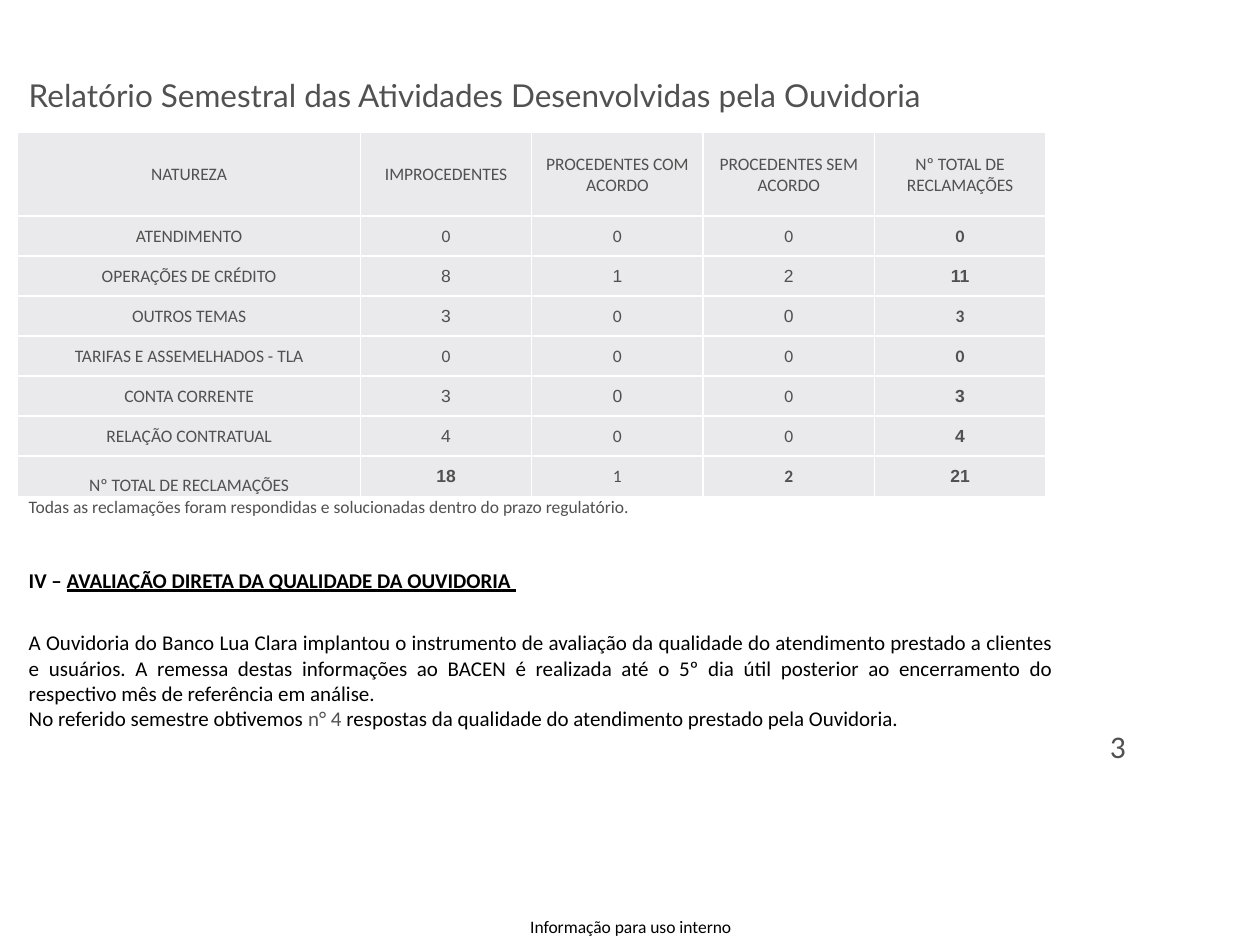
import pptx
import pptx.dml.color
import pptx.enum.text
import pptx.oxml
import pptx.util

HUES = {"ink": "505150", "dark": "000000", "cell": "EAE9EB", "rule": "FFFFFF"}
ALIGN = pptx.enum.text.PP_ALIGN
ANCHOR = pptx.enum.text.MSO_ANCHOR
NS = "http://schemas.openxmlformats.org/drawingml/2006/main"
COLS, ROWS = 100, 75
WIDE, HIGH = pptx.util.Inches(10), pptx.util.Inches(7.5)
HEAD = ["NATUREZA", "IMPROCEDENTES", "PROCEDENTES COM ACORDO",
        "PROCEDENTES SEM ACORDO", "Nº TOTAL DE RECLAMAÇÕES"]
DATA = [
    ("ATENDIMENTO", "0 0 0 0", "CCCC"),
    ("OPERAÇÕES DE CRÉDITO", "8 1 2 11", "AAAA"),
    ("OUTROS TEMAS", "3 0 0 3", "ACAC"),
    ("TARIFAS E ASSEMELHADOS - TLA", "0 0 0 0", "CCCC"),
    ("CONTA CORRENTE", "3 0 0 3", "AACA"),
    ("RELAÇÃO CONTRATUAL", "4 0 0 4", "ACCA"),
    ("Nº TOTAL DE RECLAMAÇÕES", "18 1 2 21", "ACCA"),
]
FACES = {"A": "Arial", "C": "Calibri"}


def tone(key):
    """Return the named colour."""
    return pptx.dml.color.RGBColor.from_string(HUES[key])


def place(box):
    """Turn columns and rows of the slide grid into lengths."""
    left, top, wide, high = box
    return (int(left * WIDE / COLS), int(top * HIGH / ROWS),
            int(wide * WIDE / COLS), int(high * HIGH / ROWS))


def write(para, text, size=10, face="Calibri", hue="ink", bold=False,
          line=False, align=None, gap=0):
    """Add one formatted run to a paragraph."""
    if align is not None:
        para.alignment = align
    if gap:
        para.space_before = pptx.util.Pt(gap)
    run = para.add_run()
    run.text = text
    font = run.font
    font.size, font.name = pptx.util.Pt(size), face
    font.bold, font.underline = bold, line
    font.color.rgb = tone(hue)


def frame(slide, box, anchor=ANCHOR.TOP):
    """Add a wrapping text box and return its frame."""
    text = slide.shapes.add_textbox(*place(box)).text_frame
    text.word_wrap = True
    text.vertical_anchor = anchor
    return text


def title(slide, box):
    """Place the report title."""
    text = frame(slide, box, ANCHOR.BOTTOM)
    text.margin_bottom = pptx.util.Inches(0.09)
    write(text.paragraphs[0],
          "Relatório Semestral das Atividades Desenvolvidas pela Ouvidoria",
          size=18, face="Lato")


def edge(cell):
    """Draw thin rules on the four sides of a cell."""
    props = cell._tc.get_or_add_tcPr()
    for spot, side in enumerate(("lnL", "lnR", "lnT", "lnB")):
        props.insert(spot, pptx.oxml.parse_xml(
            f'<a:{side} xmlns:a="{NS}" w="12700"><a:solidFill>'
            f'<a:srgbClr val="{HUES["rule"]}"/></a:solidFill></a:{side}>'))


def fill(cell, text, **form):
    """Fill one table cell with centred text."""
    inset = pptx.util.Inches(0.01)
    cell.margin_left = cell.margin_right = cell.margin_top = inset
    cell.margin_bottom = 0
    cell.vertical_anchor = ANCHOR.MIDDLE
    cell.fill.solid()
    cell.fill.fore_color.rgb = tone("cell")
    edge(cell)
    write(cell.text_frame.paragraphs[0], text, align=ALIGN.CENTER, **form)


def claims(slide, box):
    """Place the table of complaints by nature."""
    left, top, wide, high = place(box)
    table = slide.shapes.add_table(
        len(DATA) + 1, len(HEAD), left, top, wide, high).table
    table.first_row = table.horz_banding = False
    for col, share in zip(table.columns, (2, 1, 1, 1, 1)):
        col.width = wide * share // 6
    first = int(high * 0.23)
    for num, row in enumerate(table.rows):
        row.height = (high - first) // len(DATA) if num else first
    for col, text in enumerate(HEAD):
        fill(table.cell(0, col), text)
    for row, (name, counts, faces) in enumerate(DATA, 1):
        fill(table.cell(row, 0), name)
        last = row == len(DATA)
        for col, (count, face) in enumerate(zip(counts.split(), faces), 1):
            bold = col == 4 or (last and col != 2)
            fill(table.cell(row, col), count, face=FACES[face], bold=bold)
    table.cell(len(DATA), 0).vertical_anchor = ANCHOR.BOTTOM


def body(slide, box):
    """Place the note and the section on quality."""
    text = frame(slide, box)
    note = text.paragraphs[0]
    write(note, "Todas as reclamações foram respondidas e solucionadas "
          "dentro do prazo regulatório.", align=ALIGN.JUSTIFY)
    main = {"size": 12, "hue": "dark", "align": ALIGN.JUSTIFY}
    head = text.add_paragraph()
    write(head, "IV – ", bold=True, gap=28.5, **main)
    write(head, "AVALIAÇÃO DIRETA DA QUALIDADE DA OUVIDORIA ",
          bold=True, line=True, **main)
    write(text.add_paragraph(),
          "A Ouvidoria do Banco Lua Clara implantou o instrumento de "
          "avaliação da qualidade do atendimento prestado a clientes e "
          "usuários. A remessa destas informações ao BACEN é realizada até "
          "o 5º dia útil posterior ao encerramento do respectivo mês de "
          "referência em análise.", gap=21.5, **main)
    close = text.add_paragraph()
    write(close, "No referido semestre obtivemos ", **main)
    write(close, "n° 4 ", **{**main, "hue": "ink"})
    write(close, "respostas da qualidade do atendimento prestado pela "
          "Ouvidoria.", **main)


def folio(slide, box):
    """Place the page number."""
    write(frame(slide, box).paragraphs[0], "3", size=18)


def foot(slide, box):
    """Place the notice at the foot."""
    text = frame(slide, box, ANCHOR.MIDDLE)
    text.margin_left = text.margin_right = 0
    text.margin_top = text.margin_bottom = 0
    write(text.paragraphs[0], "Informação para uso interno",
          hue="dark", align=ALIGN.CENTER)


def main():
    """Build and save the slide."""
    deck = pptx.Presentation()
    deck.slide_width, deck.slide_height = WIDE, HIGH
    slide = deck.slides.add_slide(deck.slide_layouts[6])
    foot(slide, (40.3, 72.1, 19.5, 2.9))
    folio(slide, (87.1, 57.2, 9.5, 4))
    body(slide, (1.3, 38.9, 83.3, 20))
    title(slide, (1.3, 3.5, 73.3, 6.4))
    claims(slide, (1.4, 10.5, 81.6, 28.9))
    deck.save("out.pptx")


if __name__ == "__main__":
    main()
